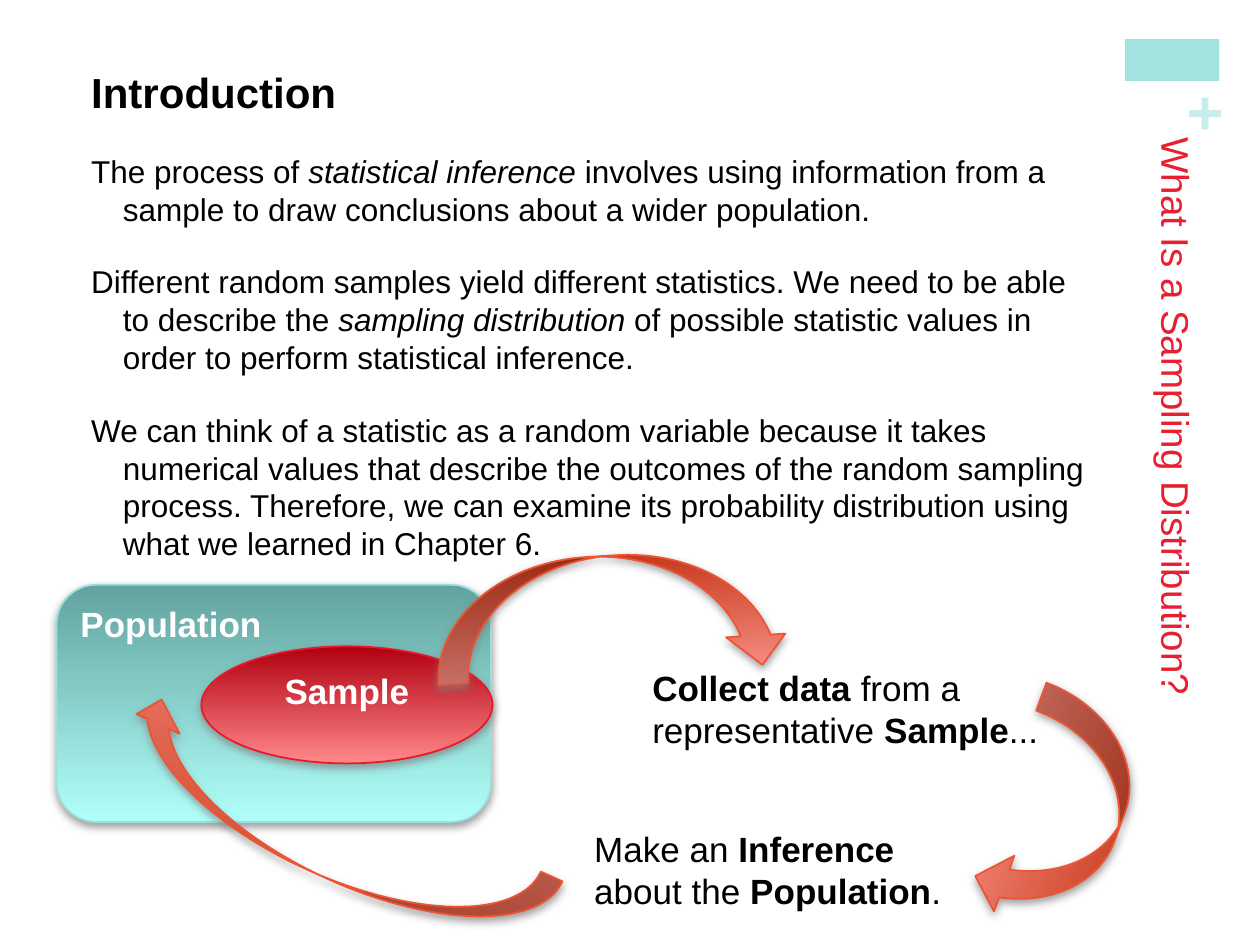
from typing import NamedTuple

from lxml import etree
from pptx import Presentation
from pptx import util as u
from pptx.dml.color import RGBColor
from pptx.enum import shapes, text
from pptx.oxml.ns import qn

FONT = "Arial"
COLOURS = {
    "black": "000000", "white": "FFFFFF", "title": "E81F30",
    "tab": "A2E3DF", "plus": "C7EEEC", "shadow": "808080",
    "teal_dark": "62A39F", "teal_light": "B1FFFA", "teal_line": "9DE0DB",
    "red_dark": "B1000F", "red_light": "FF888B", "red_line": "E8192B",
    "arrow_dark": "BD2909", "arrow_light": "FF9A90", "arrow_line": "EC5534",
}


class Place(NamedTuple):
    """Left, top, width and height in centimetres, rotation in degrees."""
    left: float
    top: float
    width: float
    height: float
    rotation: float = 0

    def lengths(self) -> list:
        return [u.Cm(value) for value in self[:4]]


class Span(NamedTuple):
    words: str
    bold: bool = False
    italic: bool = False


class Style(NamedTuple):
    size: float
    colour: str = "black"
    align: text.PP_ALIGN = text.PP_ALIGN.LEFT
    before: float = 0
    hanging: float = 0


class Glossy(NamedTuple):
    kind: shapes.MSO_SHAPE
    place: Place
    palette: str
    label: str = ""
    align: text.PP_ALIGN = text.PP_ALIGN.LEFT


INTRO = [
    [Span("The process of "), Span("statistical inference", italic=True),
     Span(" involves using information from a sample to draw conclusions "
          "about a wider population.")],
    [Span("Different random samples yield different statistics. We need to be "
          "able to describe the "),
     Span("sampling distribution", italic=True),
     Span(" of possible statistic values in order to perform statistical "
          "inference.")],
    [Span("We can think of a statistic as a random variable because it takes "
          "numerical values that describe the outcomes of the random sampling "
          "process. Therefore, we can examine its probability distribution "
          "using what we learned in Chapter 6.")],
]
COLLECT = [Span("Collect data ", bold=True), Span("from a representative "),
           Span("Sample", bold=True), Span("...")]
INFER = [Span("Make an "), Span("Inference ", bold=True), Span("about the "),
         Span("Population", bold=True), Span(".")]

ARROW = shapes.MSO_SHAPE.CURVED_DOWN_ARROW
POPULATION = Glossy(shapes.MSO_SHAPE.ROUNDED_RECTANGLE,
                    Place(1.14, 11.79, 8.76, 4.78), "teal", "Population")
SAMPLE = Glossy(shapes.MSO_SHAPE.OVAL, Place(4.06, 13.03, 5.87, 2.36), "red",
                "Sample", text.PP_ALIGN.CENTER)
TO_COLLECT = Glossy(ARROW, Place(8.76, 11.2, 7.14, 2.39, 356.4), "arrow")
TO_INFER = Glossy(ARROW, Place(19.02, 15.21, 4.75, 2.39, 110.2), "arrow")
TO_POPULATION = Glossy(ARROW, Place(2.01, 15.75, 9.35, 1.91, 204.4), "arrow")


def rgb(name: str) -> RGBColor:
    return RGBColor.from_string(COLOURS[name])


def write(paragraph, spans: list[Span], style: Style) -> None:
    paragraph.alignment = style.align
    paragraph.space_before = u.Pt(style.before)
    font = paragraph.font
    font.name, font.size = FONT, u.Pt(style.size)
    font.color.rgb = rgb(style.colour)
    if style.hanging:
        properties = paragraph._p.get_or_add_pPr()
        properties.set("marL", str(u.Cm(style.hanging)))
        properties.set("indent", str(-u.Cm(style.hanging)))
    for span in spans:
        run = paragraph.add_run()
        run.text = span.words
        run.font.bold, run.font.italic = span.bold, span.italic


def add_text(page, place: Place, spans: list[Span], style: Style,
             insets: tuple = (0.25, 0.13, 0.25, 0.13)):
    """Add a wrapping box; insets are left, top, right, bottom in cm."""
    box = page.shapes.add_textbox(*place.lengths())
    box.rotation = place.rotation
    frame = box.text_frame
    frame.word_wrap = True
    frame.vertical_anchor = text.MSO_ANCHOR.TOP
    (frame.margin_left, frame.margin_top,
     frame.margin_right, frame.margin_bottom) = map(u.Cm, insets)
    write(frame.paragraphs[0], spans, style)
    return frame


def add_shadow(shape) -> None:
    shape.shadow.inherit = False
    effects = shape._element.spPr.find(qn("a:effectLst"))
    shadow = etree.SubElement(
        effects, qn("a:outerShdw"), blurRad=str(u.Pt(5)), dist=str(u.Pt(2)),
        dir="5400000", rotWithShape="0")
    colour = etree.SubElement(shadow, qn("a:srgbClr"), val=COLOURS["shadow"])
    etree.SubElement(colour, qn("a:alpha"), val="75000")


def add_glossy(page, item: Glossy) -> None:
    """Add a shape with a dark-to-light gradient, thin line and soft shadow."""
    shape = page.shapes.add_shape(item.kind, *item.place.lengths())
    shape.rotation = item.place.rotation
    shape.fill.gradient()
    shape.fill.gradient_angle = 270
    for stop, position, tone in zip(shape.fill.gradient_stops, (0, 1),
                                    ("dark", "light")):
        stop.position = position
        stop.color.rgb = rgb(f"{item.palette}_{tone}")
    shape.line.color.rgb = rgb(f"{item.palette}_line")
    shape.line.width = u.Pt(1)
    add_shadow(shape)
    if item.label:
        shape.text_frame.vertical_anchor = text.MSO_ANCHOR.TOP
        write(shape.text_frame.paragraphs[0], [Span(item.label, bold=True)],
              Style(20, "white", item.align))


def add_side_title(page) -> None:
    tab = page.shapes.add_shape(shapes.MSO_SHAPE.RECTANGLE,
                                *Place(22.68, 0.79, 1.9, 0.84).lengths())
    tab.fill.solid()
    tab.fill.fore_color.rgb = rgb("tab")
    tab.line.fill.background()
    tab.shadow.inherit = False
    add_text(page, Place(23.88, 1.55, 0.71, 1.55, 270), [Span("+", bold=True)],
             Style(36, "plus"), (0, 0, 0, 0))
    title = add_text(page, Place(22.61, 2.64, 1.88, 16.21),
                     [Span("What Is a Sampling Distribution?")],
                     Style(22, "title"), (0.13, 0.13, 0.3, 0.13))
    title._txBody.bodyPr.set("vert", "eaVert")


def add_introduction(page) -> None:
    frame = add_text(page, Place(1.71, 1.09, 20.5, 10.2),
                     [Span("Introduction", bold=True)],
                     Style(24, hanging=0.64), (0.13, 0.25, 0.13, 0.25))
    for spans in INTRO:
        write(frame.add_paragraph(), spans, Style(18, before=20, hanging=0.64))


def main() -> None:
    deck = Presentation()
    deck.slide_width, deck.slide_height = u.Cm(25.4), u.Cm(19.05)
    page = deck.slides.add_slide(deck.slide_layouts[6])
    add_side_title(page)
    add_introduction(page)
    for item in (POPULATION, SAMPLE, TO_COLLECT):
        add_glossy(page, item)
    add_text(page, Place(12.9, 13.31, 8.59, 1.96), COLLECT, Style(20))
    add_text(page, Place(11.73, 16.56, 8.13, 1.96), INFER, Style(20))
    for item in (TO_INFER, TO_POPULATION):
        add_glossy(page, item)
    deck.save("out.pptx")


if __name__ == "__main__":
    main()
